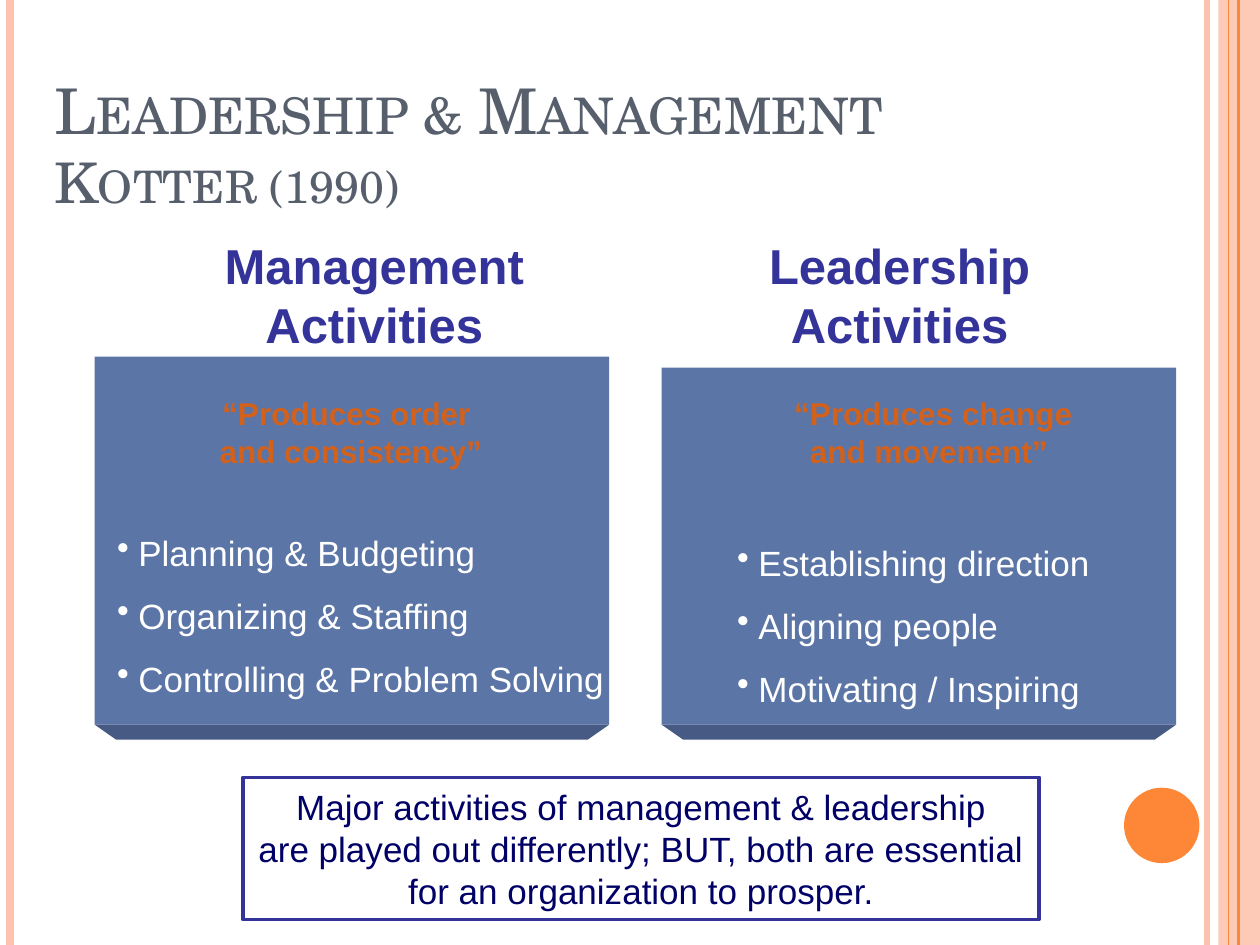
from lxml import etree
from pptx import Presentation
from pptx.dml.color import RGBColor
from pptx.enum.shapes import MSO_CONNECTOR, MSO_SHAPE
from pptx.enum.text import MSO_ANCHOR, MSO_AUTO_SIZE, PP_ALIGN
from pptx.oxml.ns import qn
from pptx.util import Cm, Pt

COLORS = {
    "peach": "FEC3AE", "orange": "FE8637", "title": "575F6D",
    "heading": "333399", "card": "5B75A6", "bevel": "465A83",
    "quote": "D2611C", "item": "FFFFFF", "note": "000066",
}


def paint(shape, color, alpha=100):
    shape.shadow.inherit = False
    shape.line.fill.background()
    shape.fill.solid()
    shape.fill.fore_color.rgb = RGBColor.from_string(COLORS[color])
    if alpha < 100:
        tint = shape.fill._xPr.find(".//" + qn("a:srgbClr"))
        etree.SubElement(tint, qn("a:alpha"), val=str(alpha * 1000))


def write(shape, lines, size, color, bold=False, bullets=False):
    frame = shape.text_frame
    frame.auto_size = MSO_AUTO_SIZE.NONE
    frame.word_wrap = bullets
    frame.text = "\n".join(lines)
    for paragraph in frame.paragraphs:
        paragraph.alignment = PP_ALIGN.LEFT if bullets else PP_ALIGN.CENTER
        paragraph.font.name = "Arial"
        paragraph.font.size = Pt(size)
        paragraph.font.bold = bold
        paragraph.font.color.rgb = RGBColor.from_string(COLORS[color])
        if bullets:
            paragraph.line_spacing = 1.5
            props = paragraph._p.get_or_add_pPr()
            props.set("marL", str(Cm(0.43)))
            props.set("indent", str(-Cm(0.43)))
            bullet = etree.Element(qn("a:buChar"), char="•")
            props.find(qn("a:lnSpc")).addnext(bullet)


deck = Presentation()
deck.slide_width, deck.slide_height = Cm(25.4), Cm(19.05)
slide = deck.slides.add_slide(deck.slide_layouts[5])
shapes = slide.shapes

band = shapes.add_shape(MSO_SHAPE.RECTANGLE, Cm(24.56), 0, Cm(0.84), Cm(19.05))
paint(band, "peach", 87)
for x, color, width in [(24.33, "peach", 3), (0.2, "peach", 4.5),
                        (24.97, "orange", 1.5), (24.77, "orange", 0.75)]:
    stripe = shapes.add_connector(MSO_CONNECTOR.STRAIGHT, Cm(x), 0, Cm(x), Cm(19.05))
    stripe.line.width = Pt(width)
    stripe.line.color.rgb = RGBColor.from_string(COLORS[color])
    etree.SubElement(stripe._element.spPr, qn("a:effectLst"))
dot = shapes.add_shape(MSO_SHAPE.OVAL, Cm(22.66), Cm(15.88), Cm(1.52), Cm(1.52))
paint(dot, "orange")

title = shapes.title
title.left, title.top, title.width, title.height = Cm(0.84), Cm(1.07), Cm(24.13), Cm(3.38)
title.text_frame.auto_size = MSO_AUTO_SIZE.NONE
title.text_frame.vertical_anchor = MSO_ANCHOR.BOTTOM
heading = title.text_frame.paragraphs[0]
heading.text = "Leadership & Management \vKotter (1990)"
heading.alignment = PP_ALIGN.LEFT
for run, size in zip(heading.runs, (36, 32)):
    run.font.name = "TeX Gyre Schola"
    run.font.size = Pt(size)
    run.font.color.rgb = RGBColor.from_string(COLORS["title"])
    run.font._element.set("cap", "small")

columns = [
    (1.91, 7.19, ["Management", "Activities"], (4.27, 6.55),
     ["“Produces order", " and consistency”"], (2.97, 8.03),
     ["Planning & Budgeting", "Organizing & Staffing",
      "Controlling & Problem Solving"], (2.11, 10.16, 10.59)),
    (13.34, 7.41, ["Leadership", "Activities"], (15.24, 5.79),
     [" “Produces change", "and movement”"], (14.61, 8.23),
     ["Establishing direction", "Aligning people",
      "Motivating / Inspiring"], (14.61, 10.36, 7.62)),
]
card_width, card_bottom, bevel_depth, bevel_inset = 10.37, 14.61, 0.3, 0.43
for (left, top, activity, (activity_x, activity_w), quote, (quote_x, quote_w),
     items, (items_x, items_y, items_w)) in columns:
    card = shapes.add_shape(MSO_SHAPE.RECTANGLE, Cm(left), Cm(top),
                            Cm(card_width), Cm(card_bottom - top))
    paint(card, "card")
    right, low = left + card_width, card_bottom + bevel_depth
    outline = shapes.build_freeform(Cm(left), Cm(card_bottom))
    outline.add_line_segments([
        (Cm(right), Cm(card_bottom)), (Cm(right - bevel_inset), Cm(low)),
        (Cm(left + bevel_inset), Cm(low))])
    paint(outline.convert_to_shape(), "bevel")
    write(shapes.add_textbox(Cm(activity_x), Cm(4.62), Cm(activity_w), Cm(2.62)),
          activity, 28, "heading", bold=True)
    write(shapes.add_textbox(Cm(quote_x), Cm(7.82), Cm(quote_w), Cm(2.29)),
          quote, 18, "quote", bold=True)
    write(shapes.add_textbox(Cm(items_x), Cm(items_y), Cm(items_w), Cm(4.06)),
          items, 20, "item", bullets=True)

note = shapes.add_shape(MSO_SHAPE.RECTANGLE, Cm(4.9), Cm(15.67), Cm(16.05), Cm(2.87))
note.shadow.inherit = False
note.fill.background()
note.line.color.rgb = RGBColor.from_string(COLORS["heading"])
note.line.width = Pt(2)
write(note, ["Major activities of management & leadership",
             "are played out differently; BUT, both are essential",
             "for an organization to prosper."], 20, "note")

deck.save("out.pptx")
